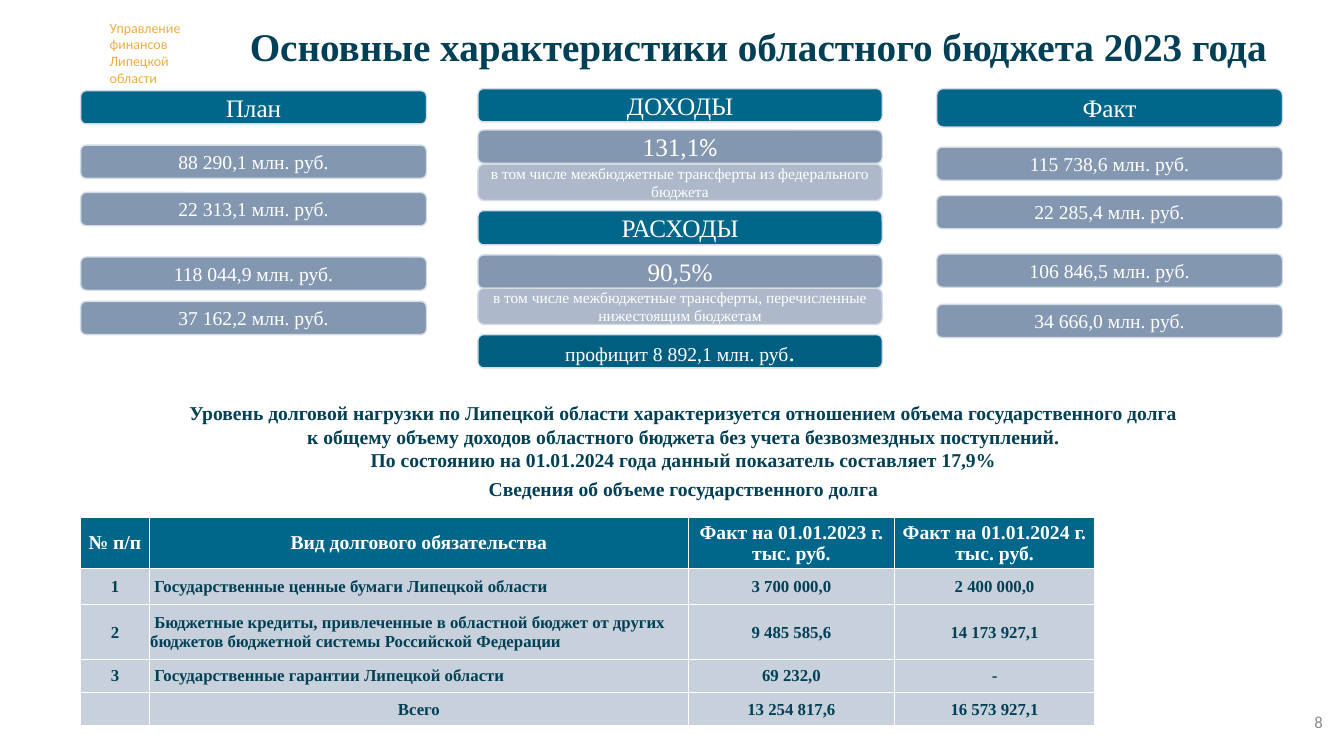
from dataclasses import dataclass

from lxml import etree
from pptx import Presentation
from pptx.dml.color import RGBColor
from pptx.enum.shapes import MSO_SHAPE
from pptx.enum.text import MSO_ANCHOR, PP_ALIGN
from pptx.oxml.ns import qn
from pptx.util import Inches, Pt

ROUNDED, RECTANGLE = MSO_SHAPE.ROUNDED_RECTANGLE, MSO_SHAPE.RECTANGLE
TOP, MIDDLE = MSO_ANCHOR.TOP, MSO_ANCHOR.MIDDLE
LEFT, CENTER, RIGHT = PP_ALIGN.LEFT, PP_ALIGN.CENTER, PP_ALIGN.RIGHT


@dataclass(frozen=True)
class Theme:
    serif: str = "Times New Roman"
    sans: str = "Calibri"
    white: str = "FFFFFF"
    navy: str = "004056"
    teal: str = "00668A"
    deep_teal: str = "005F81"
    slate: str = "8497B0"
    pale_slate: str = "ADB9CA"
    outline: str = "D6DCE5"
    amber: str = "F2AC44"
    grey: str = "8C8C8C"
    title: int = 28
    heading: int = 18
    body: int = 14
    small: int = 12
    note: int = 11
    agency: int = 10


THEME = Theme()


@dataclass(frozen=True)
class Style:
    size: int
    color: str = THEME.white
    font: str = THEME.serif
    bold: bool = False
    align: PP_ALIGN = CENTER


HEADING = Style(THEME.heading)
AMOUNT = Style(THEME.body)
NOTE = Style(THEME.note)
STATEMENT = Style(THEME.body, THEME.navy, bold=True)
TABLE_HEAD = Style(THEME.body, bold=True)
TABLE_BODY = Style(THEME.small, THEME.navy, bold=True)
TABLE_KIND = Style(THEME.small, THEME.navy, bold=True, align=LEFT)


@dataclass(frozen=True)
class Bar:
    text: str
    top: float
    fill: str = THEME.slate
    style: Style = AMOUNT
    height: float = 0.33
    ending: str = ""
    ending_style: Style = HEADING


@dataclass(frozen=True)
class Column:
    left: float
    width: float
    bars: tuple[Bar, ...]


COLUMNS = (
    Column(0.8, 3.43, (
        Bar("План", 0.9, THEME.teal, HEADING),
        Bar("88 290,1 млн. руб.", 1.44),
        Bar("22 313,1 млн. руб.", 1.91),
        Bar("118 044,9 млн. руб.", 2.55),
        Bar("37 162,2 млн. руб.", 2.99),
    )),
    Column(4.74, 4.01, (
        Bar("ДОХОДЫ", 0.88, THEME.teal, HEADING),
        Bar("131,1", 1.29, style=HEADING, ending="%",
            ending_style=Style(THEME.heading, font=THEME.sans)),
        Bar("в том числе межбюджетные трансферты из федерального бюджета",
            1.63, THEME.pale_slate, NOTE, 0.36),
        Bar("РАСХОДЫ", 2.09, THEME.teal, HEADING, 0.34),
        Bar("90,5%", 2.53, style=HEADING),
        Bar("в том числе межбюджетные трансферты, перечисленные нижестоящим бюджетам",
            2.86, THEME.pale_slate, NOTE, 0.36),
        Bar("профицит 8 892,1 млн. руб", 3.32, THEME.deep_teal, ending="."),
    )),
    Column(9.29, 3.43, (
        Bar("Факт", 0.88, THEME.teal, HEADING, 0.38),
        Bar("115 738,6 млн. руб.", 1.46),
        Bar("22 285,4 млн. руб.", 1.94),
        Bar("106 846,5 млн. руб.", 2.52),
        Bar("34 666,0 млн. руб.", 3.02),
    )),
)

DEBT_LEVEL = (
    "Уровень долговой нагрузки по Липецкой области характеризуется отношением объема государственного долга\n"
    "к общему объему доходов областного бюджета без учета безвозмездных поступлений.\n"
    "По состоянию на 01.01.2024 года данный показатель составляет 17,9%"
)
DEBT_ROWS = (
    ("№ п/п", "Вид долгового обязательства",
     "Факт на 01.01.2023 г.\nтыс. руб.", "Факт на 01.01.2024 г.\nтыс. руб."),
    ("1", "Государственные ценные бумаги Липецкой области", "3 700 000,0", "2 400 000,0"),
    ("2", "Бюджетные кредиты, привлеченные в областной бюджет от других бюджетов "
          "бюджетной системы Российской Федерации", "9 485 585,6", "14 173 927,1"),
    ("3", "Государственные гарантии Липецкой области", "69 232,0", "-"),
    ("", "Всего", "13 254 817,6", "16 573 927,1"),
)
DEBT_WIDTHS = (0.68, 5.35, 2.04, 1.99)
DEBT_HEIGHTS = (0.51, 0.36, 0.54, 0.33, 0.33)


def format_run(run, style: Style) -> None:
    """Apply a text style to one run."""
    run.font.name, run.font.size, run.font.bold = style.font, Pt(style.size), style.bold
    run.font.color.rgb = RGBColor.from_string(style.color)


def write(frame, text: str, style: Style, anchor: MSO_ANCHOR = MIDDLE) -> None:
    """Fill a text frame with one paragraph per line."""
    frame.text = text
    frame.word_wrap = True
    frame.vertical_anchor = anchor
    for paragraph in frame.paragraphs:
        paragraph.alignment = style.align
        for run in paragraph.runs:
            format_run(run, style)


def add_label(slide, box: tuple[float, ...], text: str, style: Style,
              anchor: MSO_ANCHOR = MIDDLE):
    """Add a text box and return its text frame."""
    frame = slide.shapes.add_textbox(*map(Inches, box)).text_frame
    write(frame, text, style, anchor)
    return frame


def add_block(slide, preset: MSO_SHAPE, box: tuple[float, ...], fill: str):
    """Add a filled shape without a shadow."""
    block = slide.shapes.add_shape(preset, *map(Inches, box))
    block.shadow.inherit = False
    block.fill.solid()
    block.fill.fore_color.rgb = RGBColor.from_string(fill)
    return block


def add_column(slide, column: Column) -> None:
    """Draw one column of rounded bars."""
    for bar in column.bars:
        block = add_block(slide, ROUNDED, (column.left, bar.top, column.width, bar.height), bar.fill)
        block.line.color.rgb = RGBColor.from_string(THEME.outline)
        block.line.width = Pt(1)
        write(block.text_frame, bar.text, bar.style)
        if bar.ending:
            ending = block.text_frame.paragraphs[0].add_run()
            ending.text = bar.ending
            format_run(ending, bar.ending_style)


def paint_cell(cell, fill: str, opacity: int) -> None:
    """Give a cell white borders and a fill of the given opacity in percent."""
    properties = cell._tc.get_or_add_tcPr()
    for side in ("lnL", "lnR", "lnT", "lnB"):
        border = etree.SubElement(properties, qn(f"a:{side}"), w=str(Pt(1)))
        paint = etree.SubElement(border, qn("a:solidFill"))
        etree.SubElement(paint, qn("a:srgbClr"), val=THEME.white)
    cell.fill.solid()
    cell.fill.fore_color.rgb = RGBColor.from_string(fill)
    if opacity < 100:
        color = properties.find(qn("a:solidFill")).find(qn("a:srgbClr"))
        etree.SubElement(color, qn("a:alpha"), val=str(opacity * 1000))


def add_debt_table(slide) -> None:
    """Draw the table of state debt."""
    box = (0.8, 5.13, sum(DEBT_WIDTHS), sum(DEBT_HEIGHTS))
    table = slide.shapes.add_table(len(DEBT_ROWS), len(DEBT_WIDTHS), *map(Inches, box)).table
    for debt_column, width in zip(table.columns, DEBT_WIDTHS):
        debt_column.width = Inches(width)
    for row_index, (values, height) in enumerate(zip(DEBT_ROWS, DEBT_HEIGHTS)):
        table.rows[row_index].height = Inches(height)
        is_head = row_index == 0
        for column_index, value in enumerate(values):
            cell = table.cell(row_index, column_index)
            cell.margin_left = cell.margin_right = cell.margin_top = Inches(0.01)
            cell.margin_bottom = 0
            is_kind = column_index == 1 and values[0].isdigit()
            write(cell.text_frame, value,
                  TABLE_HEAD if is_head else TABLE_KIND if is_kind else TABLE_BODY)
            cell.vertical_anchor = MIDDLE
            if is_kind:
                cell.text_frame.paragraphs[0]._p.get_or_add_pPr().set("indent", str(Inches(0.04)))
            paint_cell(cell, THEME.teal if is_head else THEME.slate, 100 if is_head else 45)


def main() -> None:
    """Build the budget slide and save it."""
    deck = Presentation()
    deck.slide_width, deck.slide_height = Inches(13.33), Inches(7.5)
    slide = deck.slides.add_slide(deck.slide_layouts[6])
    add_label(slide, (0.99, 0.14, 0.97, 0.77), "Управление финансов Липецкой области",
              Style(THEME.agency, THEME.amber, THEME.sans, align=LEFT), TOP)
    title = add_label(slide, (2.13, 0.3, 10.78, 0.36),
                      "Основные характеристики областного бюджета 2023 года",
                      Style(THEME.title, THEME.navy, bold=True))
    title.paragraphs[0].line_spacing = 0.9
    add_label(slide, (10.11, 6.96, 3.11, 0.4), "8",
              Style(THEME.small, THEME.grey, THEME.sans, align=RIGHT))
    debt_level = add_block(slide, RECTANGLE, (0.66, 3.93, 12.24, 0.81), THEME.white)
    debt_level.line.fill.background()
    write(debt_level.text_frame, DEBT_LEVEL, STATEMENT, TOP)
    for column in COLUMNS:
        add_column(slide, column)
    add_debt_table(slide)
    add_label(slide, (0.66, 4.68, 12.24, 0.34), "Сведения об объеме государственного долга",
              STATEMENT, TOP)
    deck.save("out.pptx")


if __name__ == "__main__":
    main()
